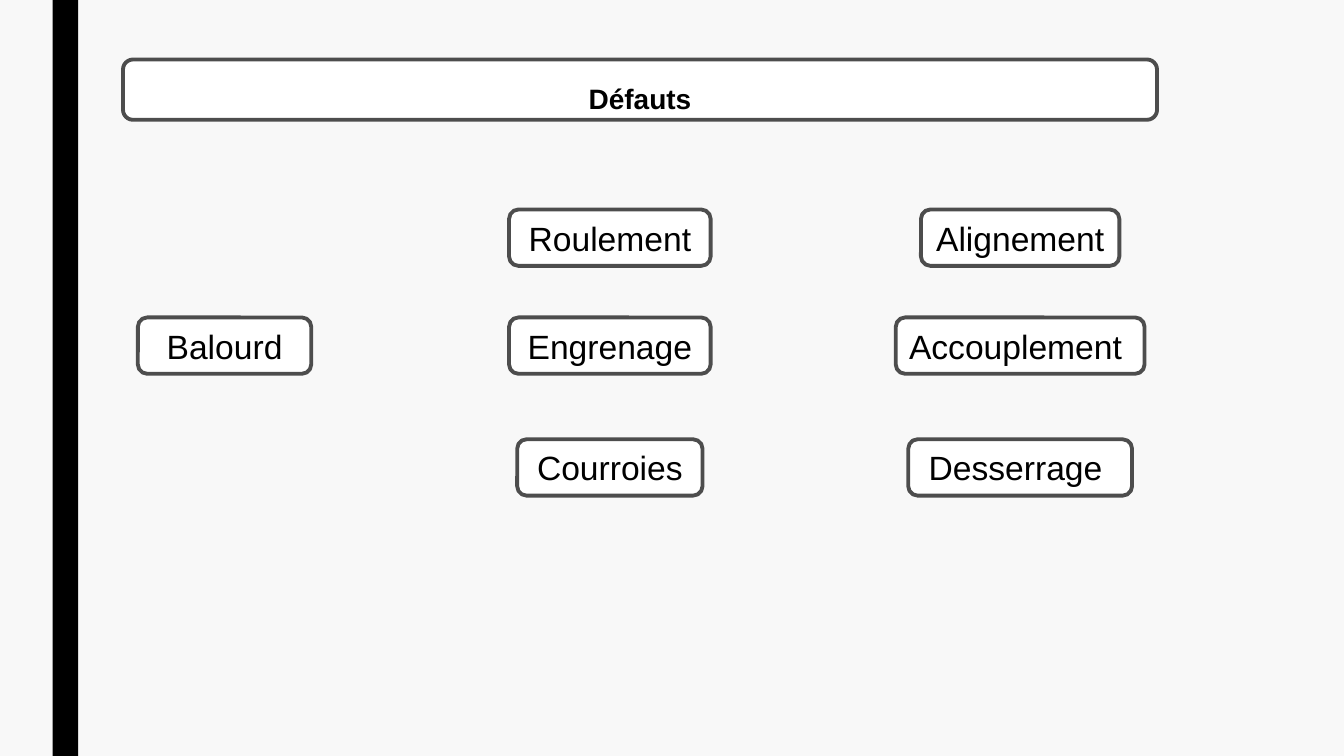
from dataclasses import dataclass

from pptx import Presentation
from pptx.dml.color import RGBColor
from pptx.enum.shapes import MSO_SHAPE
from pptx.enum.text import MSO_ANCHOR, MSO_AUTO_SIZE, PP_ALIGN
from pptx.util import Cm, Pt

RECT = MSO_SHAPE.RECTANGLE
ROUND = MSO_SHAPE.ROUNDED_RECTANGLE
MIDDLE = MSO_ANCHOR.MIDDLE
CENTER = PP_ALIGN.CENTER
FIXED = MSO_AUTO_SIZE.NONE


@dataclass(frozen=True)
class Theme:
    font: str = "Arial"
    back: str = "F8F8F8"
    fill: str = "FFFFFF"
    edge: str = "4D4D4D"
    ink: str = "000000"
    head: float = 20
    label: float = 24
    line: float = 2.75


def write(shape, text, *, size, color, font, bold=False, space=1.0):
    frame = shape.text_frame
    frame.word_wrap = False
    frame.auto_size = FIXED
    frame.vertical_anchor = MIDDLE
    para = frame.paragraphs[0]
    para.alignment = CENTER
    para.line_spacing = space
    run = para.add_run()
    run.text = text
    run.font.name = font
    run.font.size = Pt(size)
    run.font.bold = bold
    run.font.color.rgb = RGBColor.from_string(color)


class Board:
    def __init__(self, slide, theme):
        self.slide = slide
        self.theme = theme
        fill = slide.background.fill
        fill.solid()
        fill.fore_color.rgb = RGBColor.from_string(theme.back)

    def shape(self, kind, area, color):
        item = self.slide.shapes.add_shape(kind, *map(Cm, area))
        item.shadow.inherit = False
        item.fill.solid()
        item.fill.fore_color.rgb = RGBColor.from_string(color)
        return item

    def bar(self, area):
        self.shape(RECT, area, self.theme.ink).line.fill.background()

    def box(self, area):
        item = self.shape(ROUND, area, self.theme.fill)
        item.line.color.rgb = RGBColor.from_string(self.theme.edge)
        item.line.width = Pt(self.theme.line)
        return item

    def title(self, text, area):
        frame = self.box(area)
        head = self.slide.shapes.title
        head.left, head.top, head.width, head.height = map(Cm, area)
        # Bring the title in front of its frame
        frame._element.addnext(head._element)
        write(head, text, size=self.theme.head, color=self.theme.ink,
              font=self.theme.font, bold=True, space=1.5)

    def label(self, text, mid, top, width, height=1.42):
        item = self.box((mid - width / 2, top, width, height))
        write(item, text, size=self.theme.label, color=self.theme.ink,
              font=self.theme.font)


def main():
    deck = Presentation()
    deck.slide_width, deck.slide_height = Cm(33.87), Cm(19.05)
    board = Board(deck.slides.add_slide(deck.slide_layouts[5]), Theme())

    # Side bar and heading
    board.bar((1.33, 0, 0.64, 19.05))
    board.title("Défauts", (3.1, 1.5, 26.06, 1.52))

    # Fault labels, centred on three columns: row, text, width
    rows = (5.28, 8, 11.07)
    faults = {
        5.66: [(1, "Balourd", 4.37)],
        15.37: [(0, "Roulement", 5.08), (1, "Engrenage", 5.08),
                (2, "Courroies", 4.67)],
        25.71: [(0, "Alignement", 5), (1, "Accouplement ", 6.27),
                (2, "Desserrage ", 5.64)],
    }
    for mid, column in faults.items():
        for row, text, width in column:
            board.label(text, mid, rows[row], width)

    deck.save("out.pptx")


if __name__ == "__main__":
    main()
